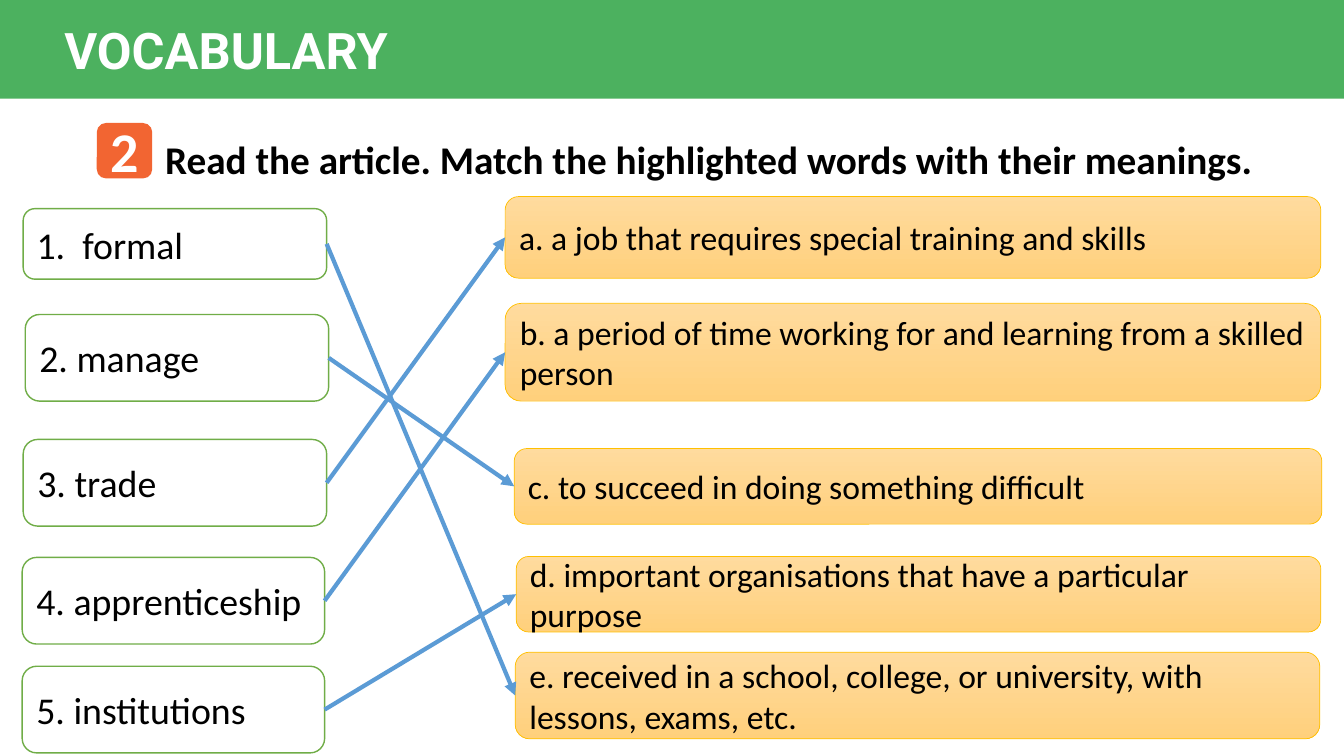
from dataclasses import dataclass

from lxml.etree import SubElement
from pptx import Presentation
from pptx.dml.color import RGBColor
from pptx.enum.shapes import MSO_CONNECTOR, MSO_SHAPE
from pptx.enum.text import MSO_ANCHOR, PP_ALIGN
from pptx.oxml.ns import qn
from pptx.shapes.autoshape import Shape
from pptx.slide import Slide
from pptx.util import Inches, Pt


@dataclass(frozen=True)
class Theme:
    banner: str = "4CB15F"
    badge: str = "F26532"
    white: str = "FFFFFF"
    black: str = "000000"
    word_line: str = "70AD47"
    mean_line: str = "FFC000"
    mean_top: str = "FFDB9E"
    mean_end: str = "FFD07C"
    arrow: str = "5B9BD5"
    body: str = "Calibri"
    head: str = "Roboto"
    title_size: int = 36
    badge_size: int = 40
    task_size: int = 28
    word_size: int = 27
    mean_size: int = 24


@dataclass(frozen=True)
class Box:
    left: float
    top: float
    width: float
    height: float


@dataclass(frozen=True)
class Card:
    text: str
    box: Box


@dataclass(frozen=True)
class Label:
    text: str
    box: Box
    size: int
    font: str
    color: str
    align: PP_ALIGN = PP_ALIGN.LEFT
    anchor: MSO_ANCHOR = MSO_ANCHOR.TOP


THEME = Theme()

LABELS = [
    Label("2", Box(0.99, 1.11, 0.49, 0.77), THEME.badge_size, THEME.body,
          THEME.white, align=PP_ALIGN.CENTER),
    Label("Read the article. Match the highlighted words with their meanings.",
          Box(1.54, 1.02, 11.47, 0.84), THEME.task_size, THEME.body,
          THEME.black, anchor=MSO_ANCHOR.BOTTOM),
    Label("VOCABULARY", Box(0.54, 0.14, 5, 0.71), THEME.title_size,
          THEME.head, THEME.white),
]

WORDS = [
    Card("1.  formal", Box(0.23, 2.07, 3.01, 0.7)),
    Card("2. manage", Box(0.25, 3.12, 3.01, 0.86)),
    Card("3. trade", Box(0.23, 4.36, 3.01, 0.86)),
    Card("4. apprenticeship", Box(0.22, 5.53, 3, 0.86)),
    Card("5. institutions", Box(0.22, 6.61, 3, 0.86)),
]

MEANINGS = [
    Card("a. a job that requires special training and skills",
         Box(5.01, 1.95, 8.09, 0.81)),
    Card("b. a period of time working for and learning from a skilled person",
         Box(5.01, 3.01, 8.09, 0.97)),
    Card("c. to succeed in doing something difficult",
         Box(5.1, 4.45, 8.01, 0.75)),
    Card("d. important organisations that have a particular purpose",
         Box(5.12, 5.52, 7.98, 0.75)),
    Card("e. received in a school, college, or university, with lessons, "
         "exams, etc.", Box(5.11, 6.47, 7.98, 0.86)),
]

ANSWERS = "ecabd"  # meaning letter for each word, in order


def place(box: Box) -> list[int]:
    return [Inches(n) for n in (box.left, box.top, box.width, box.height)]


def write(shape: Shape, text: str, size: int, font: str, color: str,
          bold: bool = False, align: PP_ALIGN = PP_ALIGN.LEFT,
          anchor: MSO_ANCHOR = MSO_ANCHOR.MIDDLE) -> None:
    frame = shape.text_frame
    frame.word_wrap = True
    frame.vertical_anchor = anchor
    line = frame.paragraphs[0]
    line.alignment = align
    run = line.add_run()
    run.text = text
    style = {"size": Pt(size), "name": font, "bold": bold}
    for key, value in style.items():
        setattr(run.font, key, value)
    run.font.color.rgb = RGBColor.from_string(color)


def add_block(slide: Slide, kind: MSO_SHAPE, box: Box, color: str) -> Shape:
    shape = slide.shapes.add_shape(kind, *place(box))
    shape.shadow.inherit = False
    shape.fill.solid()
    shape.fill.fore_color.rgb = RGBColor.from_string(color)
    shape.line.fill.background()
    return shape


def add_card(slide: Slide, card: Card, size: int, edge: str,
             weight: float) -> Shape:
    shape = add_block(slide, MSO_SHAPE.FLOWCHART_ALTERNATE_PROCESS, card.box,
                      THEME.white)
    shape.line.color.rgb = RGBColor.from_string(edge)
    shape.line.width = Pt(weight)
    write(shape, card.text, size, THEME.body, THEME.black)
    return shape


def shade(shape: Shape) -> None:
    """Fill from light at the top to deeper at the bottom."""
    shape.fill.gradient()
    shape.fill.gradient_angle = 270
    colors = (THEME.mean_top, THEME.mean_end)
    for stop, color in zip(shape.fill.gradient_stops, colors):
        stop.color.rgb = RGBColor.from_string(color)


def add_arrow(slide: Slide, word: Shape, meaning: Shape) -> None:
    arrow = slide.shapes.add_connector(MSO_CONNECTOR.STRAIGHT, 0, 0, 0, 0)
    arrow.begin_connect(word, 3)
    arrow.end_connect(meaning, 1)
    arrow.line.color.rgb = RGBColor.from_string(THEME.arrow)
    arrow.line.width = Pt(3)
    SubElement(arrow.line._get_or_add_ln(), qn("a:tailEnd"), type="triangle")
    SubElement(arrow._element.spPr, qn("a:effectLst"))


def main() -> None:
    deck = Presentation()
    deck.slide_width, deck.slide_height = Inches(13.33), Inches(7.5)
    slide = deck.slides.add_slide(deck.slide_layouts[6])

    add_block(slide, MSO_SHAPE.ROUNDED_RECTANGLE,
              Box(0.96, 1.22, 0.55, 0.55), THEME.badge)
    add_block(slide, MSO_SHAPE.RECTANGLE, Box(0, 0, 13.33, 0.98), THEME.banner)
    for label in LABELS:
        shape = slide.shapes.add_textbox(*place(label.box))
        write(shape, label.text, label.size, label.font, label.color,
              True, label.align, label.anchor)

    words = [add_card(slide, card, THEME.word_size, THEME.word_line, 1)
             for card in WORDS]
    meanings = {}
    for card in MEANINGS:
        shape = add_card(slide, card, THEME.mean_size, THEME.mean_line, 0.5)
        shade(shape)
        meanings[card.text[0]] = shape
    for word, letter in zip(words, ANSWERS):
        add_arrow(slide, word, meanings[letter])

    deck.save("out.pptx")


if __name__ == "__main__":
    main()
